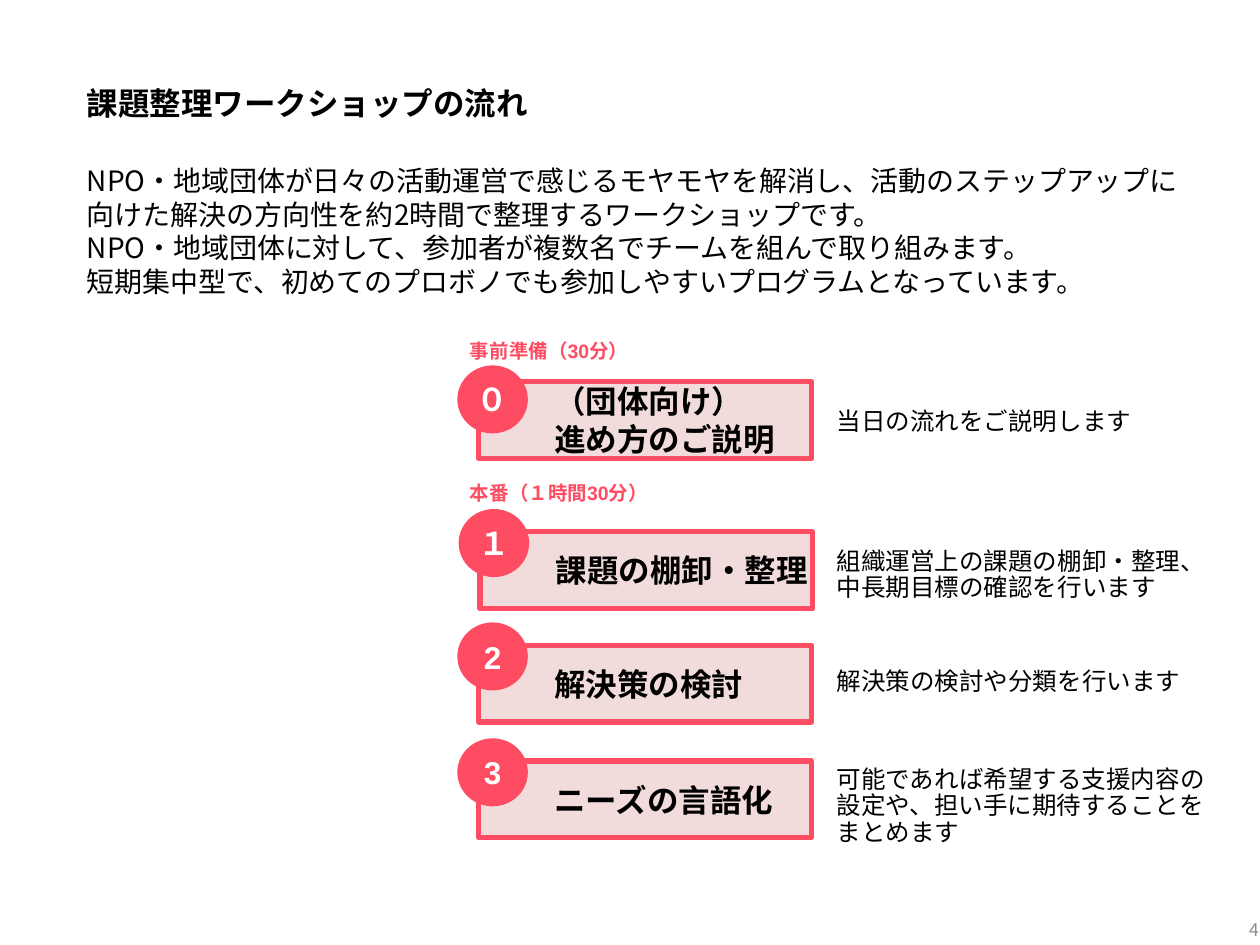
"""Build the slide that outlines the steps of the workshop."""
from dataclasses import dataclass
from typing import Optional

from lxml.etree import SubElement
from pptx import Presentation
from pptx.dml.color import RGBColor
from pptx.enum.shapes import MSO_SHAPE
from pptx.enum.text import MSO_ANCHOR, MSO_AUTO_SIZE, PP_ALIGN
from pptx.oxml.ns import qn
from pptx.util import Inches, Pt

BLACK = RGBColor(0x00, 0x00, 0x00)
WHITE = RGBColor(0xFF, 0xFF, 0xFF)
GRAY = RGBColor(0x8C, 0x8C, 0x8C)
RED = RGBColor(0xFE, 0x4C, 0x63)
PINK = RGBColor(0xF2, 0xDC, 0xDB)
ARIAL = "Arial"
NOTO = "Noto Sans CJK JP"


@dataclass
class Step:
    number: str
    text: str
    left: float
    top: float
    badge_top: float
    note: str
    note_top: float
    note_height: float


@dataclass
class Label:
    text: str
    top: float


STEPS = [
    Step("０", "（団体向け）\n進め方のご説明", 3.8, 3.03, 2.9,
         "当日の流れをご説明します", 3.2, 0.42),
    Step("１", "課題の棚卸・整理", 3.81, 4.22, 4.04,
         "組織運営上の課題の棚卸・整理、\v中長期目標の確認を行います", 4.31, 0.64),
    Step("2", "解決策の検討", 3.8, 5.12, 4.94,
         "解決策の検討や分類を行います", 5.26, 0.42),
    Step("3", "ニーズの言語化", 3.8, 6.04, 5.86,
         "可能であれば希望する支援内容の設定や、担い手に期待することをまとめます", 6.04, 0.61),
]
LABELS = [Label("事前準備（30分）", 2.66), Label("本番（１時間30分）", 3.79)]
INTRO = """NPO・地域団体が日々の活動運営で感じるモヤモヤを解消し、活動のステップアップに向けた解決の方向性を約2時間で整理するワークショップです。
NPO・地域団体に対して、参加者が複数名でチームを組んで取り組みます。
短期集中型で、初めてのプロボノでも参加しやすいプログラムとなっています。"""


def write(sp, text: str, size: float, font: str, color: RGBColor,
          bold: bool = False, align: PP_ALIGN = PP_ALIGN.LEFT,
          anchor: MSO_ANCHOR = MSO_ANCHOR.TOP) -> None:
    """Put formatted text into a shape."""
    tf = sp.text_frame
    tf.text = text
    tf.word_wrap = True
    tf.vertical_anchor = anchor
    for p in tf.paragraphs:
        p.alignment = align
        for r in p.runs:
            r.font.size = Pt(size)
            r.font.name = font
            r.font.bold = bold
            r.font.color.rgb = color


def place(sp, left: float, top: float, width: float, height: float) -> None:
    """Move and size a placeholder that grows with its text."""
    sp.left, sp.top = Inches(left), Inches(top)
    sp.width, sp.height = Inches(width), Inches(height)
    sp.text_frame.auto_size = MSO_AUTO_SIZE.SHAPE_TO_FIT_TEXT


def add_text(s, left: float, top: float, width: float, height: float,
             text: str, size: float, font: str, color: RGBColor, bold: bool = False) -> None:
    """Add a text box with tight line spacing."""
    sp = s.shapes.add_textbox(Inches(left), Inches(top), Inches(width), Inches(height))
    write(sp, text, size, font, color, bold)
    tf = sp.text_frame
    tf.margin_left = tf.margin_right = Inches(0.09)
    p = tf.paragraphs[0]
    p.line_spacing = 0.9
    p.space_before = Pt(10)


def add_shape(s, kind: MSO_SHAPE, left: float, top: float, width: float,
              height: float, fill: RGBColor, line: Optional[RGBColor] = None):
    """Add a flat filled shape without side margins."""
    sp = s.shapes.add_shape(kind, Inches(left), Inches(top), Inches(width), Inches(height))
    sp.shadow.inherit = False
    sp.fill.solid()
    sp.fill.fore_color.rgb = fill
    if line is None:
        sp.line.fill.background()
    else:
        sp.line.color.rgb = line
        sp.line.width = Pt(3)
    sp.text_frame.margin_left = sp.text_frame.margin_right = 0
    return sp


def add_step(s, step: Step) -> None:
    """Draw a step box with its number badge and note."""
    box = add_shape(s, MSO_SHAPE.RECTANGLE, step.left, step.top, 2.64, 0.61, PINK, RED)
    write(box, step.text, 18, ARIAL, BLACK, True, anchor=MSO_ANCHOR.MIDDLE)
    box.text_frame.margin_left = Inches(0.6)
    badge = add_shape(s, MSO_SHAPE.OVAL, step.left - 0.17, step.badge_top, 0.56, 0.54, RED)
    write(badge, step.number, 18, ARIAL, WHITE, True, PP_ALIGN.CENTER, MSO_ANCHOR.MIDDLE)
    add_text(s, 6.55, step.note_top, 3.14, step.note_height, step.note, 14, NOTO, BLACK)


def main() -> None:
    """Build and save the slide."""
    prs = Presentation()
    prs.slide_width, prs.slide_height = Inches(10), Inches(7.5)
    s = prs.slides.add_slide(prs.slide_layouts[1])

    title, body = s.shapes.title, s.placeholders[1]
    write(title, "課題整理ワークショップの流れ", 18, ARIAL, BLACK, True)
    place(title, 0.59, 0.62, 8.9, 0.4)
    write(body, INTRO, 16, NOTO, BLACK)
    place(body, 0.59, 1.25, 8.9, 1.18)
    for p in body.text_frame.paragraphs:
        p.space_before = Pt(0)
        pPr = p._p.get_or_add_pPr()
        pPr.set("marL", "0")
        pPr.set("indent", "0")
        SubElement(pPr, qn("a:buNone"))

    for step in STEPS:
        add_step(s, step)
    for label in LABELS:
        add_text(s, 3.64, label.top, 4.23, 0.42, label.text, 11.1, ARIAL, RED, True)

    number = s.shapes.add_textbox(Inches(7.66), Inches(7.26), Inches(2.33), Inches(0.24))
    write(number, "4", 10, NOTO, GRAY, align=PP_ALIGN.RIGHT, anchor=MSO_ANCHOR.MIDDLE)
    number.text_frame.margin_right = 0

    prs.save("out.pptx")


if __name__ == "__main__":
    main()
